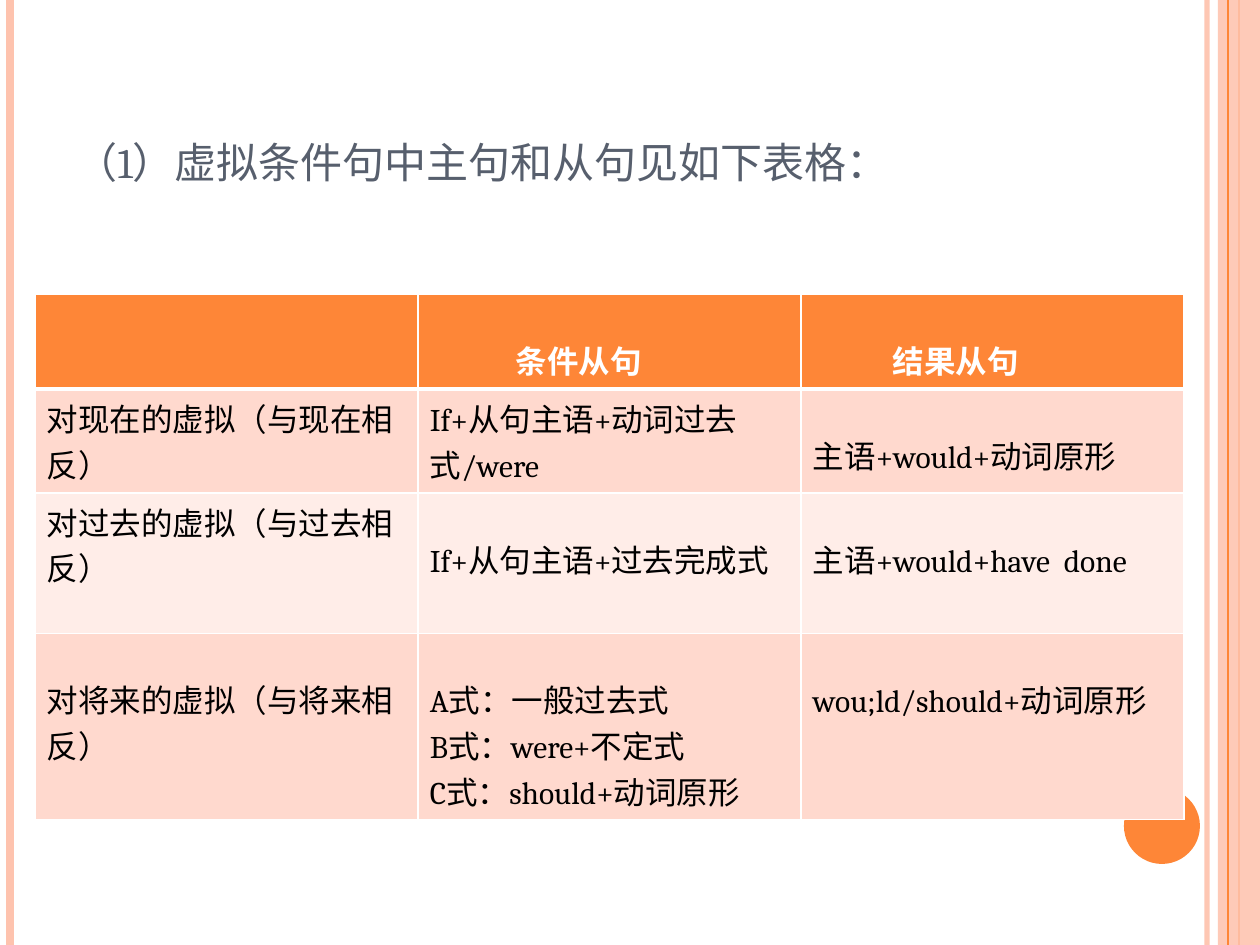
from lxml import etree
from pptx import Presentation
from pptx import util as u
from pptx.dml import color as c
from pptx.enum import shapes, text
from pptx.oxml import ns

COLORS = {
    "orange": "FE8637",
    "peach": "FEC3AE",
    "title": "575F6D",
    "band": "FFD9CE",
    "pale": "FFEDE8",
    "white": "FFFFFF",
    "black": "000000",
}
FONT = "Cambria"
WIDTH, HEIGHT = 1260, 945
LINE_GAP = 37
HEADER = [([], 0, 0), (["条件从句"], LINE_GAP, 86), (["结果从句"], LINE_GAP, 80)]
BODY = [
    [(["对现在的虚拟（与现在相反）"], 0, 0),
     (["If+从句主语+动词过去式/were"], 0, 0),
     (["主语+would+动词原形"], LINE_GAP, 0)],
    [(["对过去的虚拟（与过去相反）"], 0, 0),
     (["If+从句主语+过去完成式"], LINE_GAP, 0),
     (["主语+would+have  done"], LINE_GAP, 0)],
    [(["对将来的虚拟（与将来相反）"], LINE_GAP, 0),
     (["A式：一般过去式", "B式：were+不定式", "C式：should+动词原形"], LINE_GAP, 0),
     (["wou;ld/should+动词原形"], LINE_GAP, 0)],
]


class SlideBuilder:
    """Holds the style and the current slide, and draws each kind of element."""

    def __init__(self, presentation):
        self.scale = 914400 / 126
        presentation.slide_width = self.px(WIDTH)
        presentation.slide_height = self.px(HEIGHT)
        self.slide = presentation.slides.add_slide(presentation.slide_layouts[5])

    def px(self, length):
        return u.Emu(round(length * self.scale))

    def box(self, *lengths):
        return [self.px(length) for length in lengths]

    def color(self, name):
        return c.RGBColor.from_string(COLORS[name])

    def alpha(self, shape, percent):
        for element in shape.element.iter(ns.qn("a:srgbClr")):
            etree.SubElement(element, ns.qn("a:alpha"), val=str(percent * 1000))

    def run(self, paragraph, content, size, color, bold=False):
        run = paragraph.add_run()
        run.text = content
        run.font.name = FONT
        run.font.size = u.Pt(size)
        run.font.bold = bold
        run.font.color.rgb = self.color(color)
        return run

    def rule(self, x, color, width, opacity=100):
        connector = self.slide.shapes.add_connector(
            shapes.MSO_CONNECTOR.STRAIGHT, *self.box(x, 0, x, HEIGHT))
        connector.line.color.rgb = self.color(color)
        connector.line.width = u.Pt(width)
        etree.SubElement(connector.element.spPr, ns.qn("a:effectLst"))
        if opacity < 100:
            self.alpha(connector, opacity)

    def shape(self, kind, box, color, opacity=100):
        shape = self.slide.shapes.add_shape(kind, *self.box(*box))
        shape.shadow.inherit = False
        shape.fill.solid()
        shape.fill.fore_color.rgb = self.color(color)
        shape.line.fill.background()
        if opacity < 100:
            self.alpha(shape, opacity)

    def title(self, content, box):
        title = self.slide.shapes.title
        title.left, title.top, title.width, title.height = self.box(*box)
        frame = title.text_frame
        frame.word_wrap = True
        frame.auto_size = text.MSO_AUTO_SIZE.NONE
        frame.vertical_anchor = text.MSO_ANCHOR.BOTTOM
        paragraph = frame.paragraphs[0]
        paragraph.alignment = text.PP_ALIGN.LEFT
        run = self.run(paragraph, content, 30, "title")
        run.font._element.set("cap", "small")

    def borders(self, cell, widths):
        properties = cell._tc.get_or_add_tcPr()
        for index, (side, width) in enumerate(widths.items()):
            line = etree.Element(ns.qn(f"a:ln{side}"), w=str(u.Pt(width)))
            fill = etree.SubElement(line, ns.qn("a:solidFill"))
            etree.SubElement(fill, ns.qn("a:srgbClr"), val=COLORS["white"])
            properties.insert(index, line)

    def cell(self, cell, content, fill, color, bold, widths):
        lines, drop, indent = content
        cell.fill.solid()
        cell.fill.fore_color.rgb = self.color(fill)
        cell.margin_top = self.px(6 + drop)
        cell.margin_left = self.px(12 + indent)
        frame = cell.text_frame
        for index, line in enumerate(lines):
            paragraph = frame.add_paragraph() if index else frame.paragraphs[0]
            self.run(paragraph, line, 18, color, bold)
        self.borders(cell, widths)

    def table(self, rows, left, top, column_width, heights):
        columns = len(rows[0])
        table = self.slide.shapes.add_table(
            len(rows), columns,
            *self.box(left, top, column_width * columns, sum(heights))).table
        for column in table.columns:
            column.width = self.px(column_width)
        for index, (row, height) in enumerate(zip(rows, heights)):
            table.rows[index].height = self.px(height)
            header = index == 0
            fill = "orange" if header else "band" if index % 2 else "pale"
            widths = {"L": 1, "R": 1, "T": 3 if index == 1 else 1, "B": 3 if header else 1}
            for position, content in enumerate(row):
                self.cell(table.cell(index, position), content, fill,
                          "white" if header else "black", header, widths)


def main():
    presentation = Presentation()
    builder = SlideBuilder(presentation)
    builder.rule(1207, "peach", 3, 93)
    builder.rule(10, "peach", 4.5)
    builder.rule(1239, "orange", 1.5)
    builder.shape(shapes.MSO_SHAPE.RECTANGLE, (1218, 0, 42, HEIGHT), "peach", 87)
    builder.rule(1228, "orange", 0.75)
    builder.shape(shapes.MSO_SHAPE.OVAL, (1124, 788, 76, 76), "orange")
    builder.title("（1）虚拟条件句中主句和从句见如下表格：", (63, 38, 1029, 157))
    builder.table([HEADER] + BODY, 35, 294, 383, [94, 104, 140, 186])
    presentation.save("out.pptx")


if __name__ == "__main__":
    main()
